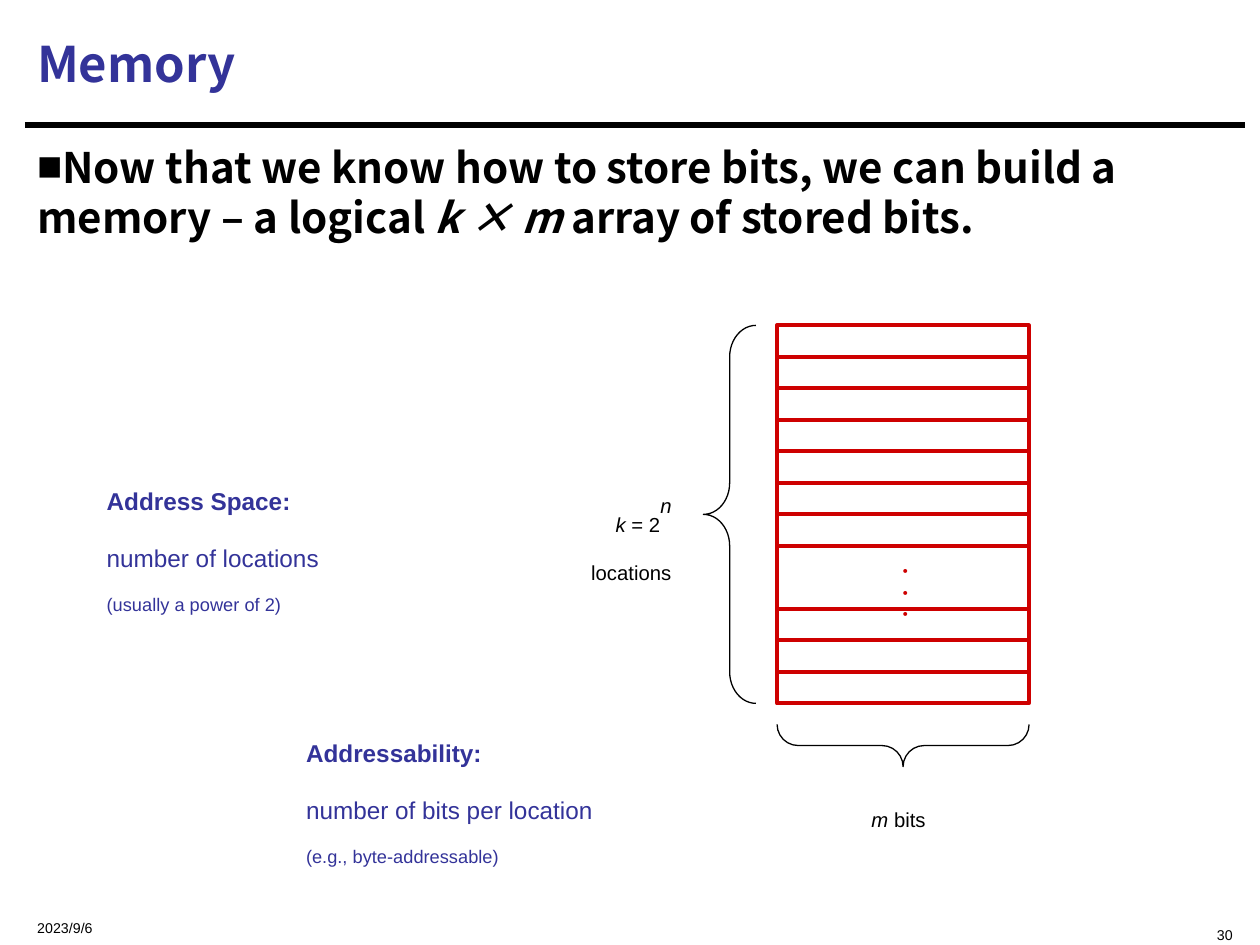
from dataclasses import dataclass

from lxml.etree import SubElement
from pptx import Presentation
from pptx.dml.color import RGBColor
from pptx.enum.shapes import MSO_CONNECTOR, MSO_SHAPE
from pptx.enum.text import MSO_ANCHOR, MSO_AUTO_SIZE, PP_ALIGN
from pptx.oxml.ns import qn
from pptx.util import Cm, Pt

COLORS = {"black": "000000", "blue": "333399", "red": "CE0000"}
NOTO = "Noto Sans CJK SC"
LEFT, MID, RIGHT = PP_ALIGN.LEFT, PP_ALIGN.CENTER, PP_ALIGN.RIGHT
LOW, HIGH = -25, 30


@dataclass
class Part:
    """A run of text with its style."""
    text: str
    size: float
    color: str = "black"
    bold: bool = False
    slant: bool = False
    font: str = "Arial"
    shift: int = LOW


@dataclass
class Label:
    """A text box with its lines of parts."""
    box: tuple
    lines: list
    align: PP_ALIGN = LEFT
    anchor: MSO_ANCHOR = MSO_ANCHOR.TOP
    wrap: bool = False
    space: float = 1.0


@dataclass
class Brace:
    """A curly brace with its bend and turn."""
    kind: MSO_SHAPE
    box: tuple
    bend: float
    turn: int = 0


def tint(name: str) -> RGBColor:
    """Look up a colour."""
    return RGBColor.from_string(COLORS[name])


def style(run, part: Part) -> None:
    """Format one run."""
    font = run.font
    font.size, font.name = Pt(part.size), part.font
    font.bold, font.italic = part.bold, part.slant
    font.color.rgb = tint(part.color)
    props = run._r.get_or_add_rPr()
    SubElement(props, qn("a:ea")).set("typeface", part.font)
    if part.shift:
        props.set("baseline", str(part.shift * 1000))


def write(slide, label: Label):
    """Add a label and return its text frame."""
    frame = slide.shapes.add_textbox(*map(Cm, label.box)).text_frame
    frame.word_wrap, frame.vertical_anchor = label.wrap, label.anchor
    if not label.wrap:
        frame.auto_size = MSO_AUTO_SIZE.SHAPE_TO_FIT_TEXT
    for row, parts in enumerate(label.lines):
        para = frame.add_paragraph() if row else frame.paragraphs[0]
        para.alignment, para.line_spacing = label.align, label.space
        para.text = parts[0].text
        for part in parts[1:]:
            para.add_run().text = part.text
        for run, part in zip(para.runs, parts):
            style(run, part)
    return frame


def bullet(para) -> None:
    """Give a paragraph a square bullet."""
    props = para._p.get_or_add_pPr()
    props.set("marL", "0")
    props.set("indent", "0")
    SubElement(props, qn("a:buFont")).set("typeface", "Arial")
    SubElement(props, qn("a:buChar")).set("char", "■")


def shape(slide, kind: MSO_SHAPE, box: tuple, color: str, width: float):
    """Add an outlined shape without fill."""
    item = slide.shapes.add_shape(kind, *map(Cm, box))
    item.shadow.inherit = False
    item.fill.background()
    item.line.color.rgb, item.line.width = tint(color), Pt(width)
    return item


def rule(slide, left: float, right: float, top: float, color: str, width: float):
    """Add a level line."""
    line = slide.shapes.add_connector(
        MSO_CONNECTOR.STRAIGHT, Cm(left), Cm(top), Cm(right), Cm(top))
    line.line.color.rgb, line.line.width = tint(color), Pt(width)
    SubElement(line._element.spPr, qn("a:effectLst"))
    return line


def stack(slide, left: float, top: float, width: float, height: float) -> None:
    """Draw the memory array with one double row for the dots."""
    rows, gap = 12, 8
    frame = shape(slide, MSO_SHAPE.RECTANGLE, (left, top, width, height), "red", 2.25)
    for row in range(1, rows):
        if row == gap:
            continue
        line = rule(slide, left, left + width, top + row * height / rows, "red", 2.25)
        if row * 2 == rows:
            line.begin_connect(frame, 1)
            line.end_connect(frame, 3)


def note(left: float, top: float, width: float, head: str, body: str, hint: str) -> Label:
    """Make a blue note of three lines."""
    return Label((left, top, width, 3.05), [
        [Part(head, 24, "blue", True)],
        [Part(body + "\v", 24, "blue"), Part(hint, 18, "blue")]])


def main() -> None:
    """Build the slide."""
    deck = Presentation()
    deck.slide_width, deck.slide_height = Cm(25.4), Cm(19.05)
    slide = deck.slides.add_slide(deck.slide_layouts[6])
    rule(slide, 0.5, 25.1, 2.52, "black", 3.75)

    body = Label((0.5, 2.72, 24.57, 15.21), [[
        Part("Now that we know how to store bits, we can build a memory – a logical ",
             24, bold=True, font=NOTO, shift=0),
        Part("k × m", 24, bold=True, slant=True, font=NOTO, shift=0),
        Part(" array of stored bits.", 24, bold=True, font=NOTO, shift=0)]], wrap=True)
    para = write(slide, body).paragraphs[0]
    para.space_before = Pt(4.8)
    bullet(para)

    stack(slide, 15.66, 6.56, 5.08, 7.62)
    for brace in (Brace(MSO_SHAPE.LEFT_BRACE, (14.18, 6.56, 1.06, 7.62), 0.6),
                  Brace(MSO_SHAPE.RIGHT_BRACE, (17.78, 12.49, 0.85, 5.08), 0.5, 90)):
        item = shape(slide, brace.kind, brace.box, "black", 0.75)
        item.adjustments[0], item.rotation = brace.bend, brace.turn

    dot = Part("•", 18, "red", True, font="Cabin")
    labels = [
        Label((0.5, 0.2, 24.57, 2.13),
              [[Part("Memory", 28, "blue", True, font=NOTO, shift=0)]],
              anchor=MSO_ANCHOR.MIDDLE, wrap=True),
        Label((17.78, 11, 0.94, 1.4), [[dot]] * 3, MID, space=0.5),
        Label((10.49, 9.73, 3.3, 1.96), [
            [Part("k", 20, slant=True), Part(" = 2", 20),
             Part("n", 20, slant=True, shift=HIGH)],
            [Part("locations", 20)]], RIGHT),
        Label((16.92, 15.67, 2.39, 1.09),
              [[Part("m", 20, slant=True), Part(" bits", 20)]], MID),
        note(1.9, 9.1, 7.9, "Address Space:", "number of locations",
             "(usually a power of 2)"),
        note(5.92, 14.18, 10.49, "Addressability:", "number of bits per location",
             "(e.g., byte-addressable)"),
        Label((0.5, 18.21, 6.35, 0.64), [[Part("2023/9/6", 14)]],
              anchor=MSO_ANCHOR.MIDDLE, wrap=True),
        Label((17.48, 18.21, 7.62, 0.64), [[Part("30", 14)]], RIGHT, wrap=True)]
    for label in labels:
        write(slide, label)
    deck.save("out.pptx")


if __name__ == "__main__":
    main()
